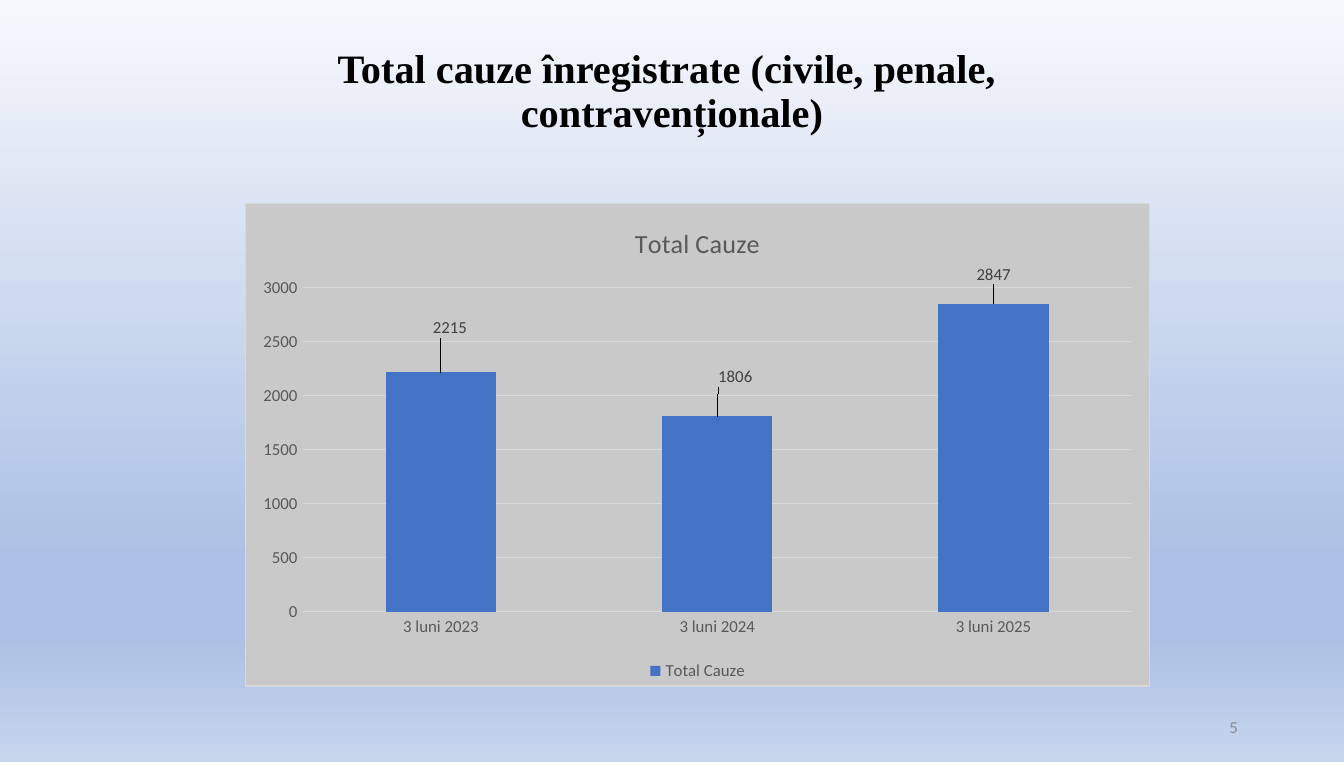
from typing import NamedTuple

from lxml.etree import SubElement
from pptx import Presentation
from pptx.chart.chart import Chart
from pptx.chart.data import CategoryChartData
from pptx.dml.color import RGBColor
from pptx.enum.chart import XL_CHART_TYPE, XL_LABEL_POSITION, XL_LEGEND_POSITION, XL_TICK_MARK
from pptx.enum.text import MSO_ANCHOR, MSO_AUTO_SIZE, PP_ALIGN
from pptx.oxml import parse_xml
from pptx.oxml.ns import nsdecls, qn
from pptx.slide import Slide
from pptx.text.text import Font, TextFrame
from pptx.util import Inches, Pt

GREY = "595959"
PALE = "D9D9D9"
SERIES_NAME = "Total Cauze"


class GradientStop(NamedTuple):
    percent: int
    color: str


class Period(NamedTuple):
    """One bar; the label shift is a fraction of the chart size."""
    name: str
    cases: int
    label_dx: float
    label_dy: float


BACKGROUND = [
    GradientStop(0, "F6F8FC"),
    GradientStop(74, "ABC0E4"),
    GradientStop(83, "ABC0E4"),
    GradientStop(100, "C7D5ED"),
]
PERIODS = [
    Period("3 luni 2023", 2215, 0.01, -0.06),
    Period("3 luni 2024", 1806, 0.02, -0.05),
    Period("3 luni 2025", 2847, 0, -0.03),
]


def rgb(color: str) -> RGBColor:
    return RGBColor.from_string(color)


def style_font(font: Font, size: float, color: str, name: str = "Calibri", bold: bool = False) -> None:
    font.size, font.name, font.bold = Pt(size), name, bold
    font.color.rgb = rgb(color)


def write(frame: TextFrame, text: str, *, size: float, color: str, align: PP_ALIGN,
          name: str = "Calibri", bold: bool = False, line_spacing: float = 1.0) -> None:
    frame.word_wrap = True
    frame.auto_size = MSO_AUTO_SIZE.NONE
    frame.vertical_anchor = MSO_ANCHOR.MIDDLE
    paragraph = frame.paragraphs[0]
    paragraph.text = text
    paragraph.alignment = align
    paragraph.line_spacing = line_spacing
    for run in paragraph.runs:
        style_font(run.font, size, color, name, bold)


def paint_background(slide: Slide, stops: list[GradientStop]) -> None:
    fill = slide.background.fill
    fill.gradient()
    fill.gradient_angle = 270
    stop_list = slide.element.find(".//" + qn("a:gsLst"))
    for default_stop in list(stop_list):
        stop_list.remove(default_stop)
    for stop in stops:
        entry = SubElement(stop_list, qn("a:gs"), pos=str(stop.percent * 1000))
        SubElement(entry, qn("a:srgbClr"), val=stop.color)


def frame_chart(chart: Chart, fill: str, border: str) -> None:
    """Fill and outline the whole chart area."""
    area = parse_xml(
        f'<c:spPr {nsdecls("c", "a")}>'
        f'<a:solidFill><a:srgbClr val="{fill}"/></a:solidFill>'
        f'<a:ln w="{Pt(0.75)}"><a:solidFill><a:srgbClr val="{border}"/></a:solidFill></a:ln>'
        '</c:spPr>')
    chart.element.find(qn("c:chart")).addnext(area)


def label_bars(chart: Chart, periods: list[Period]) -> None:
    plot = chart.plots[0]
    bars = plot.series[0]
    labels = bars.data_labels
    labels.show_value = True
    style_font(labels.font, 9, "404040")
    for index in range(len(periods)):
        label = bars.points[index].data_label
        style_font(label.font, 9, "404040")
        label.position = XL_LABEL_POSITION.OUTSIDE_END
    for period, label_xml in zip(periods, chart.element.findall(".//" + qn("c:dLbl"))):
        label_xml.insert(1, parse_xml(
            f'<c:layout {nsdecls("c")}><c:manualLayout>'
            f'<c:x val="{period.label_dx}"/><c:y val="{period.label_dy}"/>'
            '</c:manualLayout></c:layout>'))


def add_cases_chart(slide: Slide, periods: list[Period]) -> None:
    data = CategoryChartData()
    data.categories = [period.name for period in periods]
    data.add_series(SERIES_NAME, [period.cases for period in periods])
    chart = slide.shapes.add_chart(
        XL_CHART_TYPE.COLUMN_CLUSTERED,
        Inches(1.82), Inches(1.51), Inches(6.74), Inches(3.6), data).chart
    style_font(chart.font, 10, "000000")
    frame_chart(chart, "C9C9C9", PALE)

    chart.has_title = True
    write(chart.chart_title.text_frame, SERIES_NAME, size=14, color=GREY, align=PP_ALIGN.CENTER)
    chart.chart_title.include_in_layout = False

    chart.has_legend = True
    chart.legend.position = XL_LEGEND_POSITION.BOTTOM
    chart.legend.include_in_layout = False
    style_font(chart.legend.font, 9, GREY)

    for axis in (chart.category_axis, chart.value_axis):
        axis.major_tick_mark = axis.minor_tick_mark = XL_TICK_MARK.NONE
        axis.format.line.fill.background()
        style_font(axis.tick_labels.font, 9, GREY)
    gridline = chart.value_axis.major_gridlines.format.line
    gridline.width = Pt(0.75)
    gridline.color.rgb = rgb(PALE)

    plot = chart.plots[0]
    plot.gap_width = 150
    plot.vary_by_categories = False
    bar_fill = plot.series[0].format.fill
    bar_fill.solid()
    bar_fill.fore_color.rgb = rgb("4472C4")
    label_bars(chart, periods)


def main() -> None:
    deck = Presentation()
    deck.slide_width, deck.slide_height = Inches(10), Inches(5.67)
    slide = deck.slides.add_slide(deck.slide_layouts[5])
    paint_background(slide, BACKGROUND)

    title = slide.shapes.title
    title.left, title.top = Inches(0.69), Inches(0.3)
    title.width, title.height = Inches(8.62), Inches(1.1)
    title.text_frame.margin_bottom = Inches(0.37)
    write(title.text_frame, "Total cauze înregistrate (civile, penale, \vcontravenționale)",
          size=21.6, color="000000", align=PP_ALIGN.CENTER,
          name="Times New Roman", bold=True, line_spacing=0.9)

    page_number = slide.shapes.add_textbox(Inches(7.06), Inches(5.26), Inches(2.25), Inches(0.3))
    write(page_number.text_frame, "5", size=9, color="8C8C8C", align=PP_ALIGN.RIGHT)

    add_cases_chart(slide, PERIODS)
    deck.save("out.pptx")


if __name__ == "__main__":
    main()
